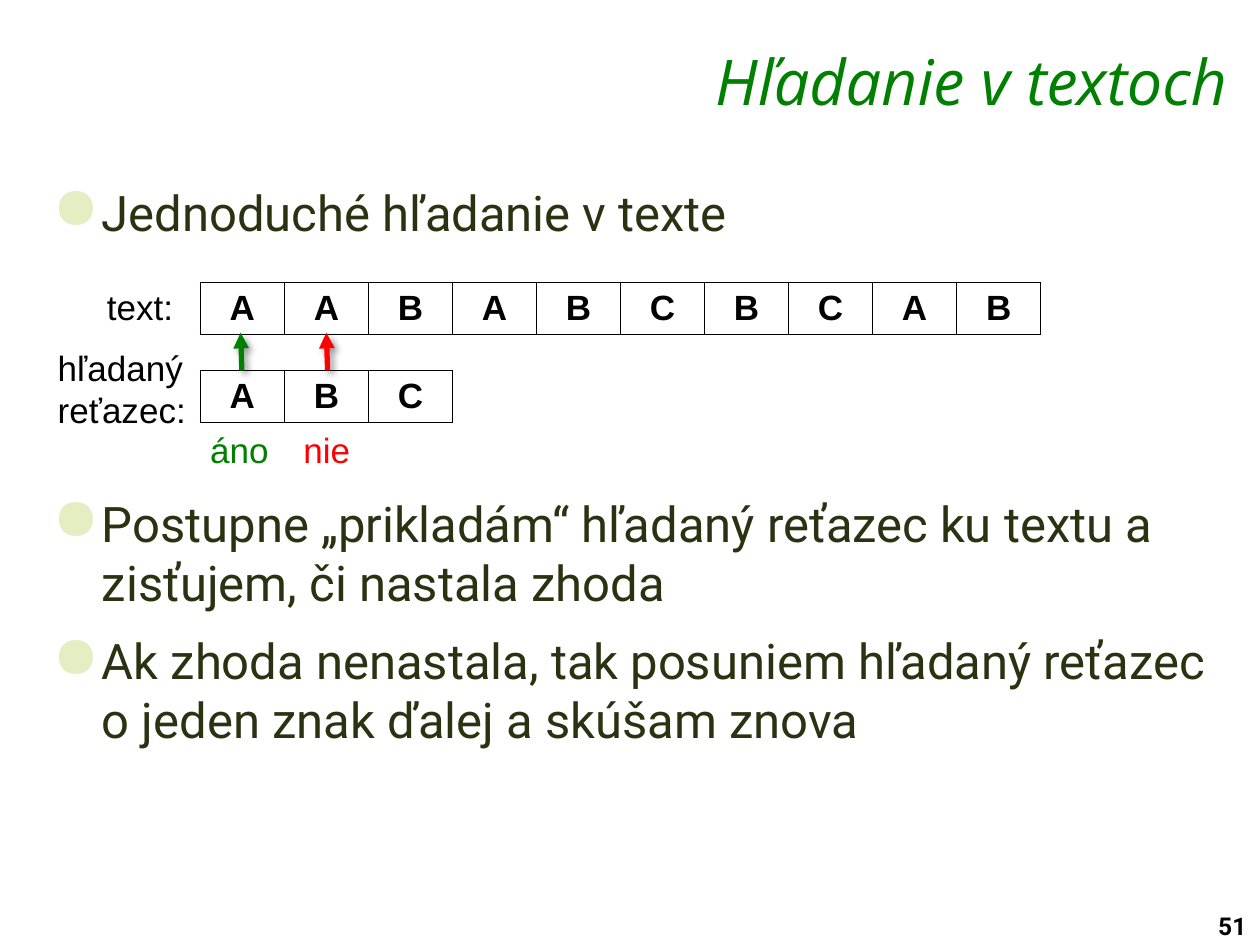
from lxml import etree
from pptx import Presentation
from pptx.dml.color import RGBColor
from pptx.enum import shapes, text
from pptx.oxml import parse_xml
from pptx.oxml.ns import nsdecls
from pptx.util import Inches, Pt

COLORS = {
    "black": "000000",
    "white": "FFFFFF",
    "green": "008000",
    "red": "FF0000",
    "olive": "2B3212",
    "bullet": "E5EEC2",
}
LABEL = {"name": "Arial", "size": Pt(20)}
CELL = {**LABEL, "bold": True}
TITLE = {"name": "Open Sans", "size": Pt(36), "italic": True}
BODY = {"name": "Roboto", "size": Pt(28)}
PAGE = {"name": "Roboto", "size": Pt(14), "bold": True}

CELL_W, ROW_H = 0.667, 0.41
GRID_X, TEXT_Y, PATTERN_Y = 1.59, 2.24, 2.94
SPACE = Pt(5.6)
DIAGRAM_GAP = Pt(138.4)


def rgb(name):
    return RGBColor.from_string(COLORS[name])


def add_run(p, content, style, color):
    r = p.add_run()
    r.text = content
    for key, value in style.items():
        setattr(r.font, key, value)
    r.font.color.rgb = rgb(color)


def add_text(s, box, lines, style, color, align=text.PP_ALIGN.LEFT, wrap=False):
    tf = s.shapes.add_textbox(*map(Inches, box)).text_frame
    tf.word_wrap = wrap
    for i, line in enumerate(lines):
        p = tf.add_paragraph() if i else tf.paragraphs[0]
        p.alignment = align
        add_run(p, line, style, color)
    return tf


def add_bullet(p):
    pPr = p._p.get_or_add_pPr()
    pPr.set("marL", str(Inches(0.39)))
    pPr.set("indent", str(-Inches(0.39)))
    for xml in (
        f'<a:buClr {nsdecls("a")}><a:srgbClr val="{COLORS["bullet"]}"/></a:buClr>',
        f'<a:buSzPct {nsdecls("a")} val="120000"/>',
        f'<a:buChar {nsdecls("a")} char="●"/>',
    ):
        pPr.append(parse_xml(xml))


def add_body(s, box, lines):
    """Bulleted text, leaving room for the diagram after the first item."""
    tf = add_text(s, box, lines, BODY, "olive", wrap=True)
    for p, before in zip(tf.paragraphs, (None, DIAGRAM_GAP, SPACE)):
        add_bullet(p)
        p.space_before = before
        p.space_after = SPACE


def add_borders(cell):
    tcPr = cell._tc.get_or_add_tcPr()
    for side in "LRTB":
        tcPr.append(parse_xml(
            f'<a:ln{side} {nsdecls("a")} w="{Pt(1)}"><a:solidFill>'
            f'<a:srgbClr val="{COLORS["black"]}"/></a:solidFill></a:ln{side}>'))


def add_letters(s, y, letters):
    """One-row table with a letter in each cell."""
    table = s.shapes.add_table(
        1, len(letters), Inches(GRID_X), Inches(y),
        Inches(CELL_W * len(letters)), Inches(ROW_H)).table
    for col, cell, letter in zip(table.columns, table.rows[0].cells, letters):
        col.width = Inches(CELL_W)
        add_borders(cell)
        cell.fill.solid()
        cell.fill.fore_color.rgb = rgb("white")
        cell.vertical_anchor = text.MSO_ANCHOR.MIDDLE
        cell.margin_top = cell.margin_bottom = Inches(0.04)
        p = cell.text_frame.paragraphs[0]
        p.alignment = text.PP_ALIGN.CENTER
        add_run(p, letter, CELL, "black")


def add_arrow(s, x, color):
    """Shadowed arrow from the pattern row up to the text row."""
    c = s.shapes.add_connector(
        shapes.MSO_CONNECTOR.STRAIGHT, Inches(x), Inches(PATTERN_Y),
        Inches(x - 0.01), Inches(TEXT_Y + 0.4))
    c.line.width = Pt(3)
    c.line.color.rgb = rgb(color)
    etree.SubElement(c.line._get_or_add_ln(),
                     "{http://schemas.openxmlformats.org/drawingml/2006/main}tailEnd",
                     type="triangle")
    c._element.spPr.append(parse_xml(
        f'<a:effectLst {nsdecls("a")}><a:outerShdw blurRad="{Pt(4)}" '
        f'dist="{Pt(3)}" dir="2700000" algn="tl" rotWithShape="0">'
        f'<a:srgbClr val="{COLORS["black"]}"><a:alpha val="40000"/></a:srgbClr>'
        '</a:outerShdw></a:effectLst>'))


def main():
    prs = Presentation()
    prs.slide_width, prs.slide_height = Inches(10), Inches(7.5)
    s = prs.slides.add_slide(prs.slide_layouts[6])

    add_text(s, (9.57, 7.18, 0.51, 0.33), ["51"], PAGE, "black", wrap=True)
    add_text(s, (2.29, 0.29, 7.55, 0.58), ["Hľadanie v textoch"], TITLE, "green",
             text.PP_ALIGN.RIGHT, wrap=True)
    add_body(s, (0.32, 1.4, 9.38, 5.8), [
        "Jednoduché hľadanie v texte",
        "Postupne „prikladám“ hľadaný reťazec ku textu a zisťujem, či nastala zhoda",
        "Ak zhoda nenastala, tak posuniem hľadaný reťazec o jeden znak ďalej a skúšam znova",
    ])

    add_letters(s, TEXT_Y, "AABABCBCAB")
    add_letters(s, PATTERN_Y, "ABC")
    add_text(s, (0.75, 2.22, 0.73, 0.44), ["text:"], LABEL, "black")
    add_text(s, (0.36, 2.7, 1.25, 0.77), ["hľadaný", "reťazec:"], LABEL, "black")

    for arrow_x, label_x, width, label, color in (
        (1.92, 1.57, 0.67, "áno", "green"),
        (2.6, 2.31, 0.58, "nie", "red"),
    ):
        add_arrow(s, arrow_x, color)
        add_text(s, (label_x, 3.35, width, 0.44), [label], LABEL, color)

    prs.save("out.pptx")


if __name__ == "__main__":
    main()
